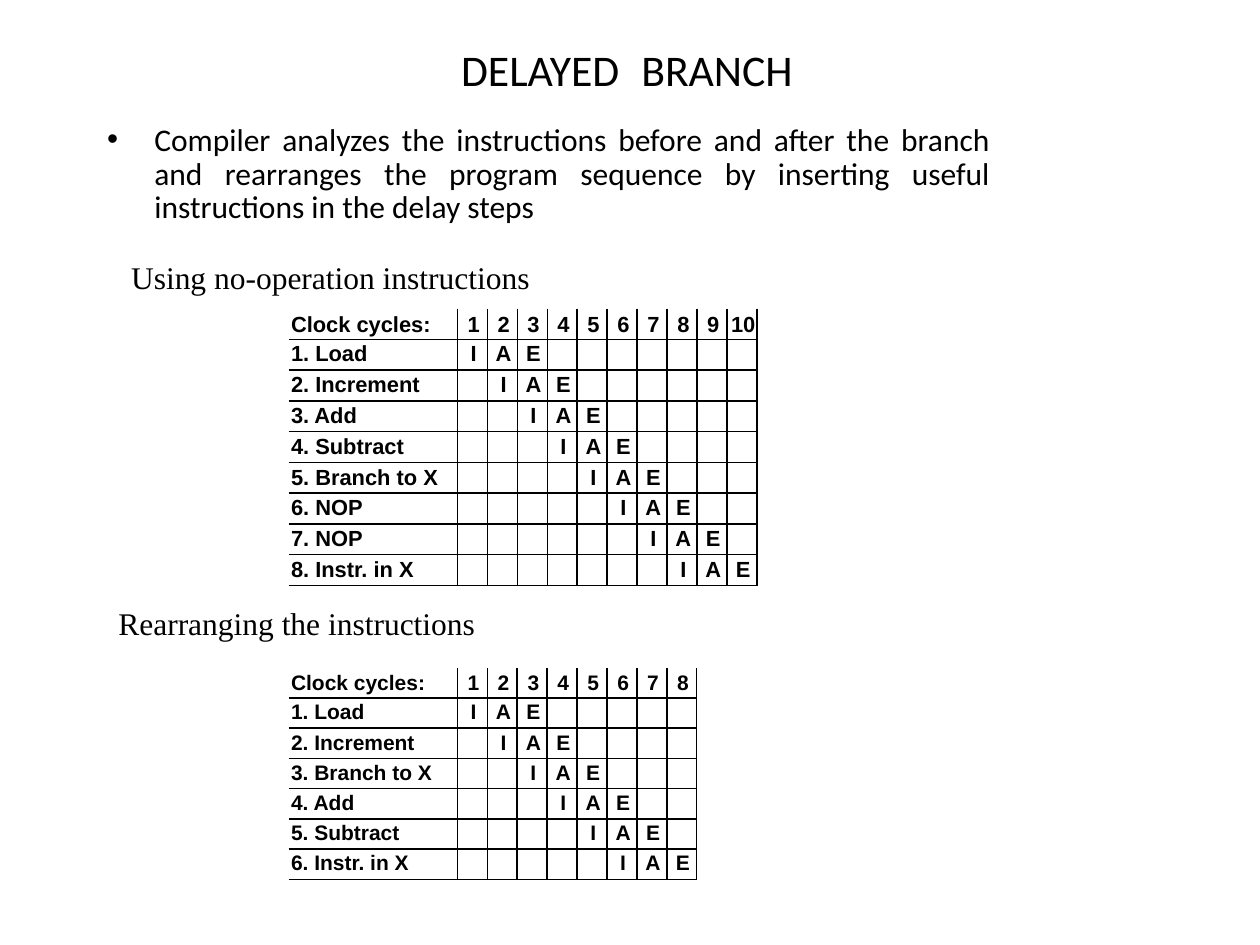
from lxml.etree import SubElement
from pptx import Presentation
from pptx.dml.color import RGBColor
from pptx.enum.text import MSO_ANCHOR, MSO_AUTO_SIZE, PP_ALIGN
from pptx.oxml.ns import qn
from pptx.util import Inches, Pt

INK = "000000"
LABEL = 1.34
FIRST = ["Load", "Increment", "Add", "Subtract", "Branch to X",
         "NOP", "NOP", "Instr. in X"]
SECOND = ["Load", "Increment", "Branch to X", "Add", "Subtract",
          "Instr. in X"]


def color(code):
    return RGBColor.from_string(code)


def style(para, name, size, bold=False):
    font = para.font
    font.name, font.size, font.bold = name, Pt(size), bold
    font.color.rgb = color(INK)


def place(shape, left, top, width, height):
    shape.left, shape.top = Inches(left), Inches(top)
    shape.width, shape.height = Inches(width), Inches(height)


def trim(frame):
    frame.margin_left = frame.margin_right = 0
    frame.margin_top = frame.margin_bottom = 0


def add_title(shape):
    place(shape, 3.66, 0.34, 2.7, 0.45)
    frame = shape.text_frame
    trim(frame)
    frame.vertical_anchor = MSO_ANCHOR.TOP
    frame.text = "DELAYED\tBRANCH"
    para = frame.paragraphs[0]
    para.alignment = PP_ALIGN.LEFT
    tabs = SubElement(para._p.get_or_add_pPr(), qn("a:tabLst"))
    SubElement(tabs, qn("a:tab"), pos=str(Inches(1.43)), algn="l")
    style(para, "Calibri", 25)


def add_body(shape):
    place(shape, 0.75, 0.93, 8.42, 0.9)
    frame = shape.text_frame
    frame.auto_size = MSO_AUTO_SIZE.NONE
    frame.margin_right = Inches(1.31)
    frame.text = ("Compiler analyzes the instructions before and after the "
                  "branch and rearranges the program sequence by inserting "
                  "useful instructions in the delay steps")
    para = frame.paragraphs[0]
    para.alignment = PP_ALIGN.JUSTIFY
    para.line_spacing = Pt(19.4)
    para.space_before = Pt(0)
    style(para, "Calibri", 18)


def add_head(slide, text, left, top, width):
    box = slide.shapes.add_textbox(
        Inches(left), Inches(top), Inches(width), Inches(0.31))
    frame = box.text_frame
    trim(frame)
    frame.word_wrap = True
    frame.text = text
    style(frame.paragraphs[0], "Times New Roman", 18)


def add_edge(cell, side, shown):
    line = SubElement(cell._tc.get_or_add_tcPr(), qn("a:ln" + side),
                      w=str(Pt(1)))
    if shown:
        fill = SubElement(line, qn("a:solidFill"))
        SubElement(fill, qn("a:srgbClr"), val=INK)
    else:
        SubElement(line, qn("a:noFill"))


def fill_cell(cell, text, row, col, size):
    trim(cell)
    for side, shown in (("L", col > 0), ("R", True),
                        ("T", row > 0), ("B", True)):
        add_edge(cell, side, shown)
    cell.fill.background()
    cell.text = text
    para = cell.text_frame.paragraphs[0]
    para.alignment = PP_ALIGN.CENTER if col else PP_ALIGN.LEFT
    cell.margin_top = Pt(1.6 if row else 2.2)
    cell.margin_left = Inches(0.02)
    style(para, "Arial", size, True)
    if not text:
        SubElement(para._p, qn("a:endParaRPr"), sz=str(int(size * 100)))


def add_grid(slide, steps, top, width, height, size):
    count = len(steps) + 2
    rows = [["Clock cycles:"] + [str(n + 1) for n in range(count)]]
    for n, step in enumerate(steps):
        stages = [""] * n + list("IAE") + [""] * (count - n - 3)
        rows.append([f"{n + 1}. {step}"] + stages)
    table = slide.shapes.add_table(
        len(rows), count + 1, Inches(2.29), Inches(top),
        Inches(width), Inches(height)).table
    table.first_row = table.horz_banding = False
    for col in table.columns:
        col.width = Inches((width - LABEL) / count)
    table.columns[0].width = Inches(LABEL)
    for r, row in enumerate(rows):
        for c, text in enumerate(row):
            fill_cell(table.cell(r, c), text, r, c, size)


def main():
    deck = Presentation()
    deck.slide_width, deck.slide_height = Inches(10), Inches(7.5)
    slide = deck.slides.add_slide(deck.slide_layouts[1])
    add_title(slide.shapes.title)
    add_body(slide.placeholders[1])
    add_head(slide, "Using no-operation instructions", 1.04, 2.05, 3.25)
    add_grid(slide, FIRST, 2.45, 3.72, 2.2, 12.5)
    add_head(slide, "Rearranging the instructions", 0.94, 4.79, 2.9)
    add_grid(slide, SECOND, 5.3, 3.24, 1.68, 12)
    deck.save("out.pptx")


if __name__ == "__main__":
    main()
